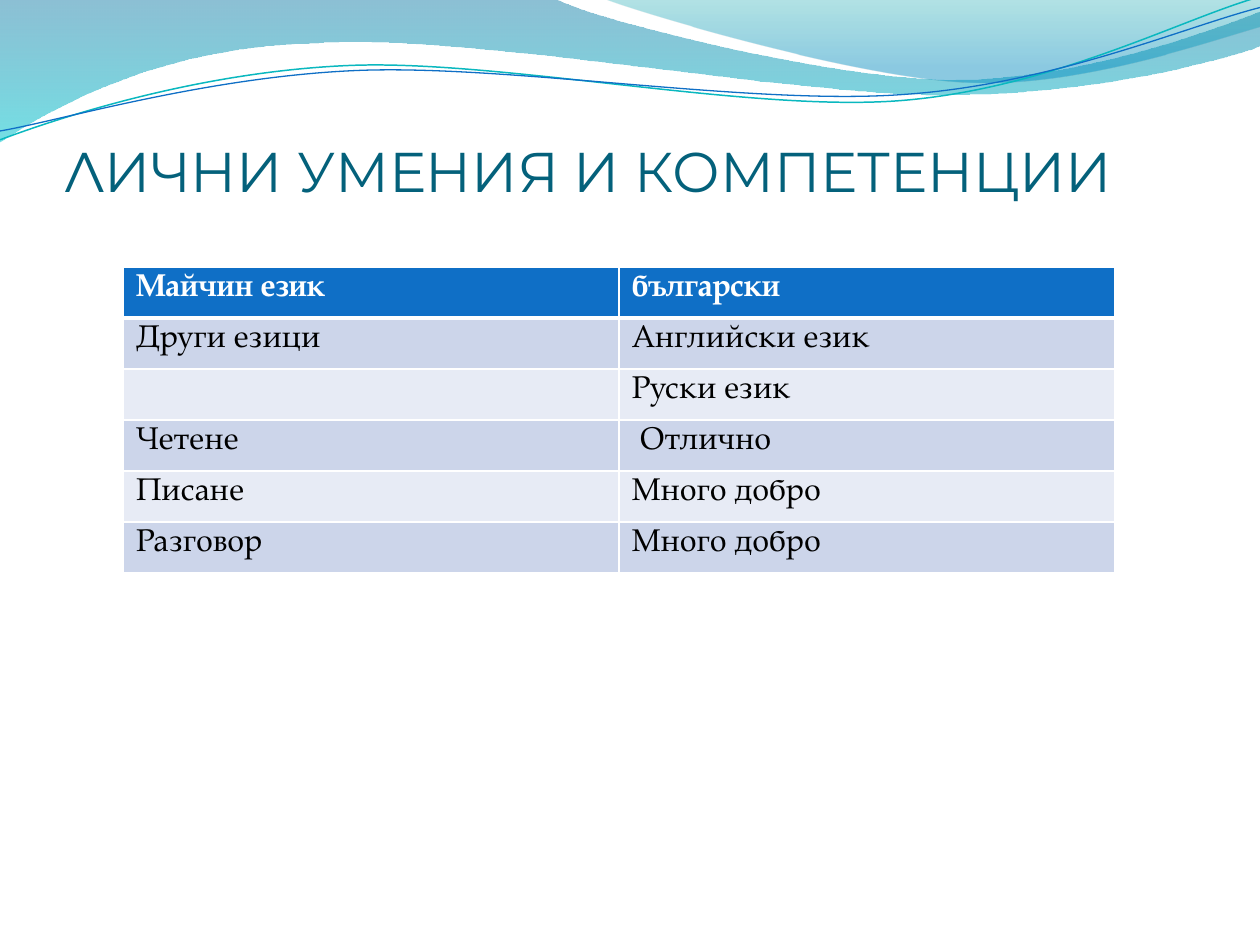
from math import cos, radians, sin

from lxml import etree
from pptx import Presentation
from pptx.dml.color import RGBColor
from pptx.enum.lang import MSO_LANGUAGE_ID as LANG
from pptx.enum.text import MSO_ANCHOR, PP_ALIGN
from pptx.oxml.ns import qn
from pptx.util import Inches, Pt

WHITE = RGBColor(0xFF, 0xFF, 0xFF)
BLACK = RGBColor(0x00, 0x00, 0x00)
TITLE = RGBColor(0x04, 0x61, 0x7B)
BLUE = RGBColor(0x0F, 0x6F, 0xC6)
TEAL = RGBColor(0x0A, 0xB8, 0xBF)
BANDS = [RGBColor(0xE7, 0xEB, 0xF5), RGBColor(0xCC, 0xD5, 0xEA)]
WAVE_TOP, WAVE_END = RGBColor(0x00, 0x74, 0xA1), RGBColor(0x00, 0xC6, 0xCF)
CREST_TOP, CREST_END = RGBColor(0x00, 0xA1, 0xA9), RGBColor(0x00, 0x8B, 0xBF)
TILT = 2.7


def add_curve(shapes, path, close):
    """Draw a path of segments; one with three points is a Bezier curve."""
    path = [[(Inches(x), Inches(y)) for x, y in seg] for seg in path]
    ends = [seg[-1] for seg in path]
    fb = shapes.build_freeform(*ends[0])
    fb.add_line_segments(ends[1:], close=close)
    sp = fb.convert_to_shape()
    sp.shadow.inherit = False
    left, top = (min(axis) for axis in zip(*ends))
    line_tags = list(sp.element.spPr.iter(qn("a:lnTo")))
    for tag, seg in zip(line_tags, path[1:]):
        if len(seg) == 3:
            curve = etree.Element(qn("a:cubicBezTo"))
            for x, y in seg:
                etree.SubElement(curve, qn("a:pt"), x=str(x - left), y=str(y - top))
            tag.getparent().replace(tag, curve)
    return sp


def set_border(cell, widths):
    """Give the cell white borders; widths maps each side to points."""
    tcPr = cell._tc.get_or_add_tcPr()
    for i, (side, width) in enumerate(widths.items()):
        ln = etree.Element(qn(f"a:ln{side}"), w=str(Pt(width)))
        fill = etree.SubElement(ln, qn("a:solidFill"))
        etree.SubElement(fill, qn("a:srgbClr"), val=str(WHITE))
        tcPr.insert(i, ln)


prs = Presentation()
prs.slide_width, prs.slide_height = Inches(10), Inches(7.5)
s = prs.slides.add_slide(prs.slide_layouts[5])

# Translucent waves: path, then gradient stops of (position, colour, opacity %)
waves = [
    ([[(0, 0)], [(4.4, -0.01)],
      [(4.76, 0.17), (6.64, 0.63), (7.58, 0.63)],
      [(8.53, 0.63), (9.58, 0.26), (10, 0.09)], [(10.01, 0.36)],
      [(9.83, 0.44), (8.7, 0.76), (7.46, 0.75)],
      [(6.22, 0.75), (3.82, 0.28), (2.57, 0.34)],
      [(1.29, 0.36), (0.46, 0.83), (-0.01, 1.13)], [(0, 0)]],
     [(0, WAVE_TOP, 45), (1, WAVE_END, 55)]),
    ([[(4.79, -0.01)],
      [(5.09, 0.11), (6.82, 0.62), (7.69, 0.65)],
      [(8.56, 0.69), (9.61, 0.32), (10, 0.21)], [(10, 0)], [(4.79, -0.01)]],
     [(0, CREST_TOP, 30), (0.8, CREST_END, 45)]),
]
for path, stops in waves:
    sp = add_curve(s.shapes, path, True)
    sp.line.fill.background()
    sp.fill.gradient()
    sp.fill.gradient_angle = 270
    for stop, (pos, color, _) in zip(sp.fill.gradient_stops, stops):
        stop.position = pos
        stop.color.rgb = color
    for clr, (_, _, opacity) in zip(sp.element.spPr.iter(qn("a:srgbClr")), stops):
        etree.SubElement(clr, qn("a:alpha"), val=str(opacity * 1000))

# Thin wave lines, levelled about their centre and then tilted as shapes
lines = [
    ([[(0, 1.11)], [(0.48, 0.93), (1.58, 0.57), (2.77, 0.52)],
      [(3.95, 0.47), (5.93, 0.89), (7.13, 0.8)],
      [(8.33, 0.71), (9.38, 0.15), (9.98, -0.02)]], (4.99, 0.57), TEAL, 0.85),
    ([[(0, 1.04)], [(0.47, 0.96), (1.64, 0.61), (2.83, 0.56)],
      [(4.03, 0.51), (5.97, 0.84), (7.17, 0.75)],
      [(8.36, 0.67), (9.41, 0.21), (10, 0.06)]], (5, 0.59), BLUE, 0.75),
]
c, d = cos(radians(TILT)), sin(radians(TILT))
for path, (cx, cy), color, width in lines:
    level = [[(cx + (x - cx) * c - (y - cy) * d, cy + (x - cx) * d + (y - cy) * c)
              for x, y in seg] for seg in path]
    sp = add_curve(s.shapes, level, False)
    sp.rotation = 360 - TILT
    sp.fill.background()
    sp.line.color.rgb = color
    sp.line.width = Pt(width)

# Title, in front of the waves
title = s.shapes.title
title.element.getparent().append(title.element)
title.left, title.top = Inches(0.51), Inches(0.77)
title.width, title.height = Inches(9.29), Inches(0.85)
tf = title.text_frame
frame_format = {"margin_left": 0, "margin_right": 0, "margin_top": Inches(0.05),
                "margin_bottom": 0, "vertical_anchor": MSO_ANCHOR.BOTTOM,
                "word_wrap": True}
for name, value in frame_format.items():
    setattr(tf, name, value)
p = tf.paragraphs[0]
p.alignment = PP_ALIGN.LEFT
r = p.add_run()
r.text = "ЛИЧНИ УМЕНИЯ И КОМПЕТЕНЦИИ"
title_font = {"name": "Montserrat", "size": Pt(32), "language_id": LANG.BULGARIAN}
for name, value in title_font.items():
    setattr(r.font, name, value)
r.font.color.rgb = TITLE

# Language table
rows = [
    ("Майчин език", "български"),
    ("Други езици", "Английски език"),
    ("", "Руски език"),
    ("Четене", " Отлично"),
    ("Писане", "Много добро"),
    ("Разговор", "Много добро"),
]
table = s.shapes.add_table(len(rows), 2, Inches(0.98), Inches(2.12),
                           Inches(7.87), Inches(2.43)).table
for i, row in enumerate(rows):
    header = i == 0
    cell_font = {"name": "TeX Gyre Pagella", "size": Pt(18), "bold": header,
                 "language_id": LANG.BULGARIAN}
    for j, text in enumerate(row):
        cell = table.cell(i, j)
        cell.fill.solid()
        cell.fill.fore_color.rgb = BLUE if header else BANDS[i % 2]
        set_border(cell, {"L": 1, "R": 1, "T": 3 if i == 1 else 1,
                          "B": 3 if header else 1})
        if not text:
            continue
        r = cell.text_frame.paragraphs[0].add_run()
        r.text = text
        for name, value in cell_font.items():
            setattr(r.font, name, value)
        r.font.color.rgb = WHITE if header else BLACK

prs.save("out.pptx")
